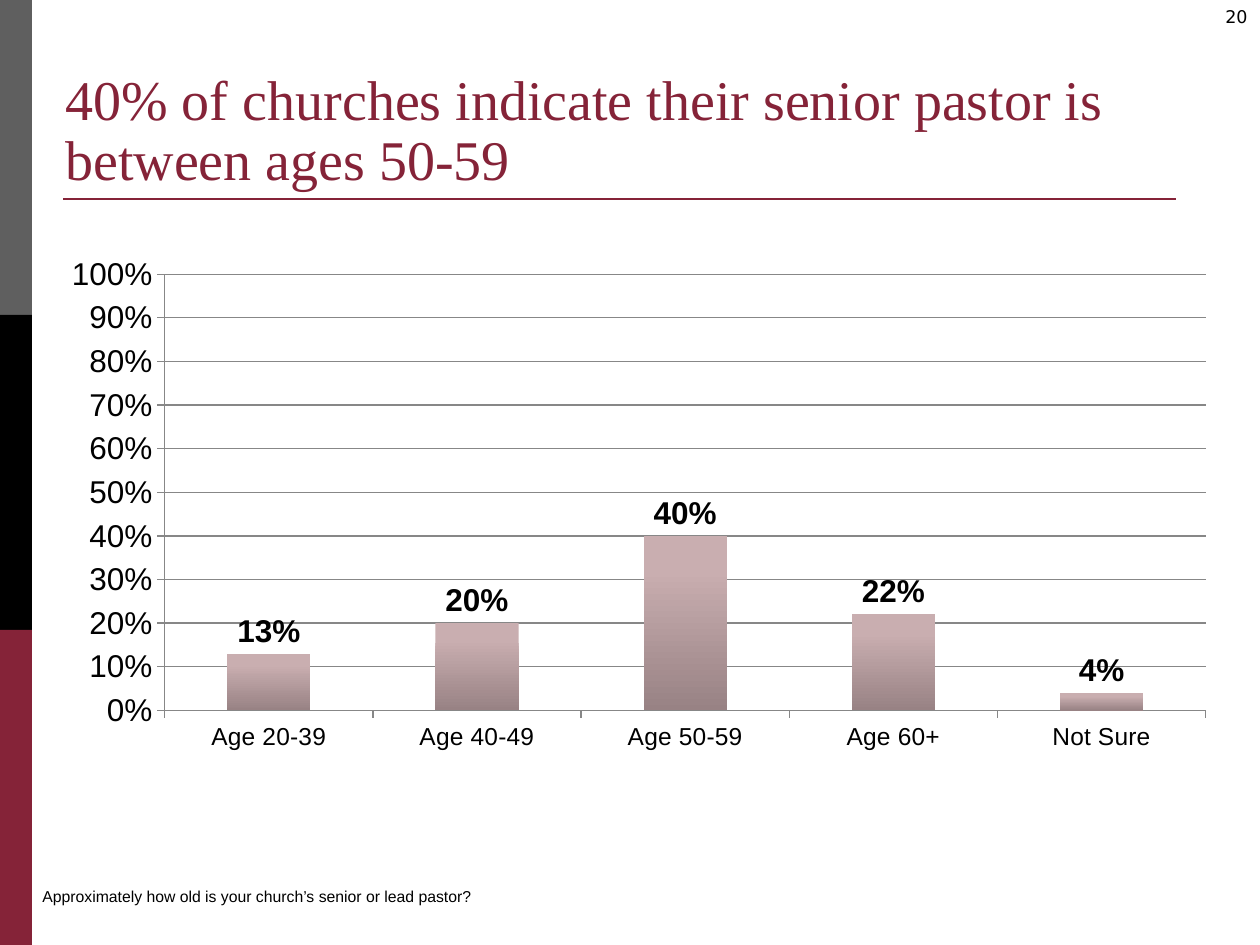
from lxml.etree import SubElement
from pptx import Presentation
from pptx.chart.data import CategoryChartData
from pptx.dml.color import RGBColor
from pptx.enum.chart import XL_CHART_TYPE, XL_LABEL_POSITION, XL_TICK_MARK
from pptx.enum.shapes import MSO_CONNECTOR, MSO_SHAPE
from pptx.enum.text import MSO_ANCHOR, PP_ALIGN
from pptx.oxml.ns import qn
from pptx.util import Emu, Pt

PX_PER_INCH = 126
WINE = RGBColor(0x85, 0x23, 0x38)
GRAY = RGBColor(0x5F, 0x5F, 0x5F)
BLACK = RGBColor(0, 0, 0)
AXIS_GRAY = RGBColor(0x87, 0x87, 0x87)
BAR_TOP = RGBColor(0xC9, 0xAE, 0xB0)
BAR_BOTTOM = RGBColor(0x98, 0x82, 0x84)

AGES = {"Age 20-39": 0.13, "Age 40-49": 0.2, "Age 50-59": 0.4,
        "Age 60+": 0.22, "Not Sure": 0.04}
PLOT_LAYOUT = {"layoutTarget": "inner", "xMode": "edge", "yMode": "edge",
               "x": 0.098, "y": 0.065, "w": 0.889, "h": 0.656}


def px(n):
    return Emu(round(n * 914400 / PX_PER_INCH))


def set_attrs(obj, **values):
    for name, value in values.items():
        setattr(obj, name, value)


def set_font(font, size, color=BLACK, name="Arial", bold=False):
    set_attrs(font, size=Pt(size), name=name, bold=bold)
    font.color.rgb = color


def add_block(s, x, y, w, h, color):
    sp = s.shapes.add_shape(MSO_SHAPE.RECTANGLE, px(x), px(y), px(w), px(h))
    sp.shadow.inherit = False
    sp.fill.solid()
    sp.fill.fore_color.rgb = color
    sp.line.fill.background()


def add_rule(s, x1, x2, y, color):
    line = s.shapes.add_connector(MSO_CONNECTOR.STRAIGHT, px(x1), px(y), px(x2), px(y))
    line.line.color.rgb = color
    line.line.width = Pt(1.5)
    SubElement(line._element.spPr, qn("a:effectLst"))


def add_text(s, text, x, y, w, h, font, frame=None, para=None):
    tf = s.shapes.add_textbox(px(x), px(y), px(w), px(h)).text_frame
    set_attrs(tf, word_wrap=True, **(frame or {}))
    p = tf.paragraphs[0]
    set_attrs(p, **(para or {}))
    r = p.add_run()
    r.text = text
    set_font(r.font, **font)


def style_line(line):
    line.color.rgb = AXIS_GRAY
    line.width = Pt(0.75)


def style_axis(axis, size):
    set_attrs(axis, major_tick_mark=XL_TICK_MARK.OUTSIDE,
              minor_tick_mark=XL_TICK_MARK.NONE)
    set_font(axis.tick_labels.font, size)
    style_line(axis.format.line)


def set_plot_layout(chart):
    area = chart._chartSpace.chart.plotArea
    for old in area.findall(qn("c:layout")):
        area.remove(old)
    layout = SubElement(area, qn("c:layout"))
    area.insert(0, layout)
    manual = SubElement(layout, qn("c:manualLayout"))
    for tag, value in PLOT_LAYOUT.items():
        SubElement(manual, qn(f"c:{tag}")).set("val", str(value))


def style_bars(plot):
    set_attrs(plot, gap_width=150, vary_by_categories=False, has_data_labels=True)
    labels = plot.data_labels
    set_attrs(labels, show_value=True, number_format="0%",
              number_format_is_linked=False, position=XL_LABEL_POSITION.OUTSIDE_END)
    set_font(labels.font, 18, bold=True)
    fill = plot.series[0].format.fill
    fill.gradient()
    fill.gradient_angle = 270
    stops = ((0.2, BAR_TOP), (1, BAR_BOTTOM))
    for stop, (position, color) in zip(fill.gradient_stops, stops):
        stop.position = position
        stop.color.rgb = color


def add_age_chart(s, x, y, w, h):
    data = CategoryChartData(number_format="0%")
    data.categories = list(AGES)
    data.add_series("Series 1", list(AGES.values()))
    chart = s.shapes.add_chart(XL_CHART_TYPE.COLUMN_CLUSTERED,
                               px(x), px(y), px(w), px(h), data).chart
    set_attrs(chart, has_title=False, has_legend=False)
    set_font(chart.font, 18)
    style_axis(chart.category_axis, 14)
    axis = chart.value_axis
    style_axis(axis, 18)
    set_attrs(axis, minimum_scale=0, maximum_scale=1, major_unit=0.1,
              has_major_gridlines=True)
    set_attrs(axis.tick_labels, number_format="0%", number_format_is_linked=False)
    style_line(axis.major_gridlines.format.line)
    style_bars(chart.plots[0])
    set_plot_layout(chart)


def main():
    prs = Presentation()
    set_attrs(prs, slide_width=px(1260), slide_height=px(945))
    s = prs.slides.add_slide(prs.slide_layouts[6])
    for i, color in enumerate((GRAY, BLACK, WINE)):
        add_block(s, 0, i * 315, 32, 315, color)
    add_rule(s, 63, 1176, 199, WINE)
    add_text(s, "20", 1197, 0, 63, 42, {"size": 10, "name": "DejaVu Sans"},
             para={"alignment": PP_ALIGN.RIGHT})
    add_age_chart(s, 50, 231, 1171, 665)
    add_text(s, "40% of churches indicate their senior pastor is between ages 50-59",
             53, 69, 1194, 130,
             {"size": 32, "name": "Times New Roman", "color": WINE},
             {"vertical_anchor": MSO_ANCHOR.BOTTOM}, {"line_spacing": 0.9})
    add_text(s, "Approximately how old is your church’s senior or lead pastor?",
             30, 881, 965, 32, {"size": 9})
    prs.save("out.pptx")


if __name__ == "__main__":
    main()
